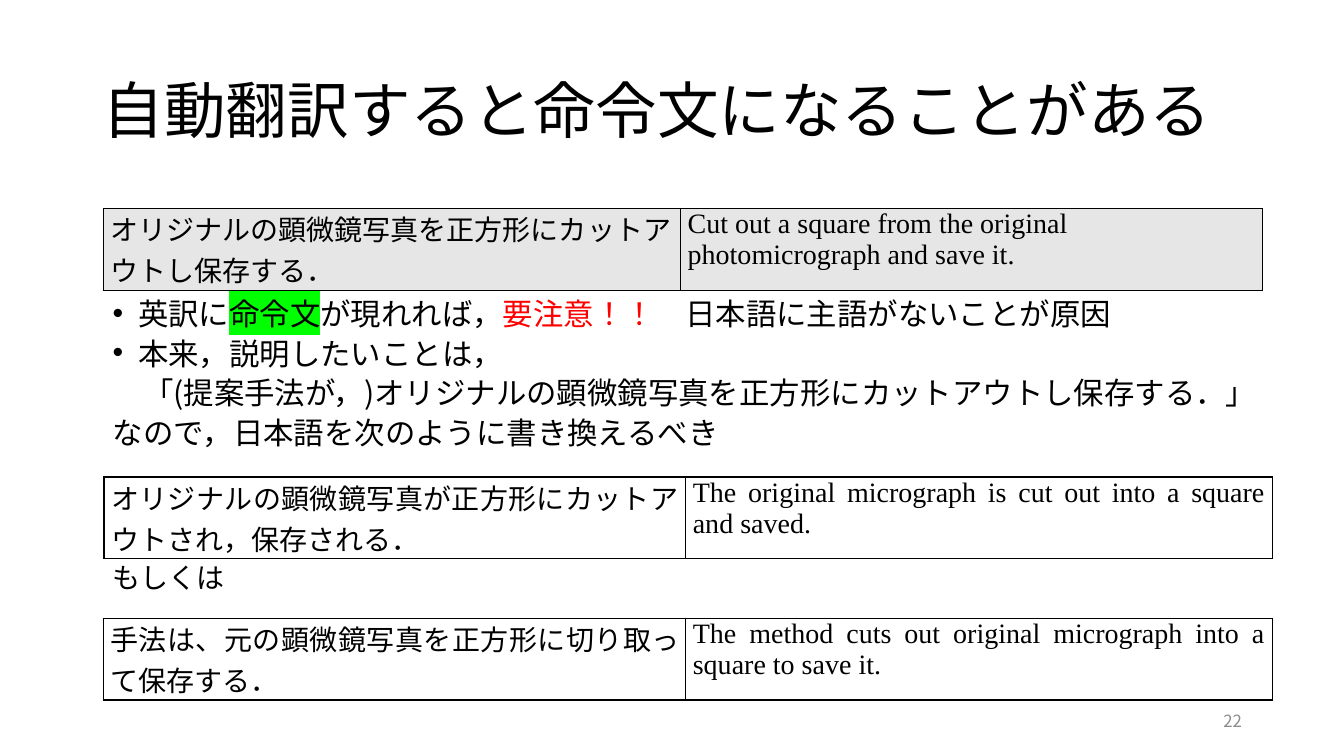
from lxml import etree
from pptx import Presentation
from pptx.dml.color import RGBColor
from pptx.enum import lang, text
from pptx.oxml.ns import qn
from pptx.util import Cm, Pt

BLACK = RGBColor(0x00, 0x00, 0x00)
RED = RGBColor(0xFF, 0x00, 0x00)
GREEN = RGBColor(0x00, 0xFF, 0x00)
GRAY = RGBColor(0x8C, 0x8C, 0x8C)
LIGHT = RGBColor(0xE7, 0xE6, 0xE6)
SANS = "Noto Sans CJK JP"
SERIF = "Times New Roman"
LEFT, JUSTIFY = text.PP_ALIGN.LEFT, text.PP_ALIGN.JUSTIFY
ROW_HEIGHT = 2.06


def add_run(p, words, size=20, color=BLACK, font=SANS, highlight=None):
    r = p.add_run()
    r.text = words
    r.font.size = Pt(size)
    r.font.language_id = lang.MSO_LANGUAGE_ID.JAPANESE
    r.font.color.rgb = color
    rPr = r.font._element
    if highlight is not None:
        mark = etree.SubElement(rPr, qn("a:highlight"))
        etree.SubElement(mark, qn("a:srgbClr"), val=str(highlight))
    r.font.name = font
    etree.SubElement(rPr, qn("a:ea"), typeface=SANS)


def add_box(left, top, width, height, anchor=text.MSO_ANCHOR.TOP):
    """Add a wrapping text box and return its text frame."""
    sp = s.shapes.add_textbox(Cm(left), Cm(top), Cm(width), Cm(height))
    tf = sp.text_frame
    tf.word_wrap = True
    tf.vertical_anchor = anchor
    return tf


prs = Presentation()
prs.slide_width, prs.slide_height = Cm(33.87), Cm(19.05)
s = prs.slides.add_slide(prs.slide_layouts[6])

# Title
p = add_box(2.34, 1.02, 29.21, 3.68, text.MSO_ANCHOR.MIDDLE).paragraphs[0]
p.line_spacing = 0.9
add_run(p, "自動翻訳すると命令文になることがある", size=44)

# Explanation: (bulleted, runs with their formats)
explanation = [
    (True, [("英訳に", {}), ("命令文", {"highlight": GREEN}), ("が現れれば，", {}),
            ("要注意！！", {"color": RED}), ("　日本語に主語がないことが原因", {})]),
    (True, [("本来，説明したいことは，", {})]),
    (False, [("　「(提案手法が，)オリジナルの顕微鏡写真を正方形にカットアウトし保存する．」", {})]),
    (False, [("なので，日本語を次のように書き換えるべき", {})]),
]
tf = add_box(2.59, 7.57, 29.97, 4.75)
for i, (bulleted, runs) in enumerate(explanation):
    p = tf.add_paragraph() if i else tf.paragraphs[0]
    p.line_spacing = 0.7
    p.space_before = Pt(10)
    if bulleted:
        pPr = p._p.get_or_add_pPr()
        pPr.set("marL", str(Cm(0.64)))
        pPr.set("indent", str(-Cm(0.64)))
        etree.SubElement(pPr, qn("a:buFont"), typeface="Arial")
        etree.SubElement(pPr, qn("a:buChar"), char="•")
    for words, style in runs:
        add_run(p, words, size=21.7, **style)

# Japanese and English pairs: left, top, column widths, fill, alignment, texts
pairs = [
    (2.6, 5.25, (14.55, 14.66), LIGHT, LEFT,
     ("オリジナルの顕微鏡写真を正方形にカットアウトし保存する．",
      "Cut out a square from the original photomicrograph and save it.")),
    (2.62, 12.02, (14.66, 14.78), None, JUSTIFY,
     ("オリジナルの顕微鏡写真が正方形にカットアウトされ，保存される．",
      "The original micrograph is cut out into a square and saved.")),
    (2.6, 15.58, (14.68, 14.78), None, JUSTIFY,
     ("手法は、元の顕微鏡写真を正方形に切り取って保存する．",
      "The method cuts out original micrograph into a square to save it.")),
]
for left, top, widths, fill, align, sentences in pairs:
    table = s.shapes.add_table(1, 2, Cm(left), Cm(top), Cm(sum(widths)), Cm(ROW_HEIGHT)).table
    table.first_row = table.horz_banding = False
    for col, (width, sentence, font) in enumerate(zip(widths, sentences, (SANS, SERIF))):
        table.columns[col].width = Cm(width)
        cell = table.cell(0, col)
        cell.margin_left = cell.margin_right = Cm(0.18)
        cell.margin_top = cell.margin_bottom = 0
        tcPr = cell._tc.get_or_add_tcPr()
        for side in "LRTB":
            ln = etree.SubElement(tcPr, qn(f"a:ln{side}"), w=str(Pt(1)))
            solid = etree.SubElement(ln, qn("a:solidFill"))
            etree.SubElement(solid, qn("a:srgbClr"), val=str(BLACK))
        if fill is None:
            cell.fill.background()
        else:
            cell.fill.solid()
            cell.fill.fore_color.rgb = fill
        p = cell.text_frame.paragraphs[0]
        p.alignment = align
        add_run(p, sentence, font=font)

# Link between the two rewrites
p = add_box(2.59, 14.1, 5.11, 1.3).paragraphs[0]
p.line_spacing = 0.9
p.space_before = Pt(10)
add_run(p, "もしくは")

# Page number
p = add_box(23.93, 17.65, 7.62, 1.02, text.MSO_ANCHOR.MIDDLE).paragraphs[0]
p.alignment = text.PP_ALIGN.RIGHT
add_run(p, "22", size=12, color=GRAY)

prs.save("out.pptx")
